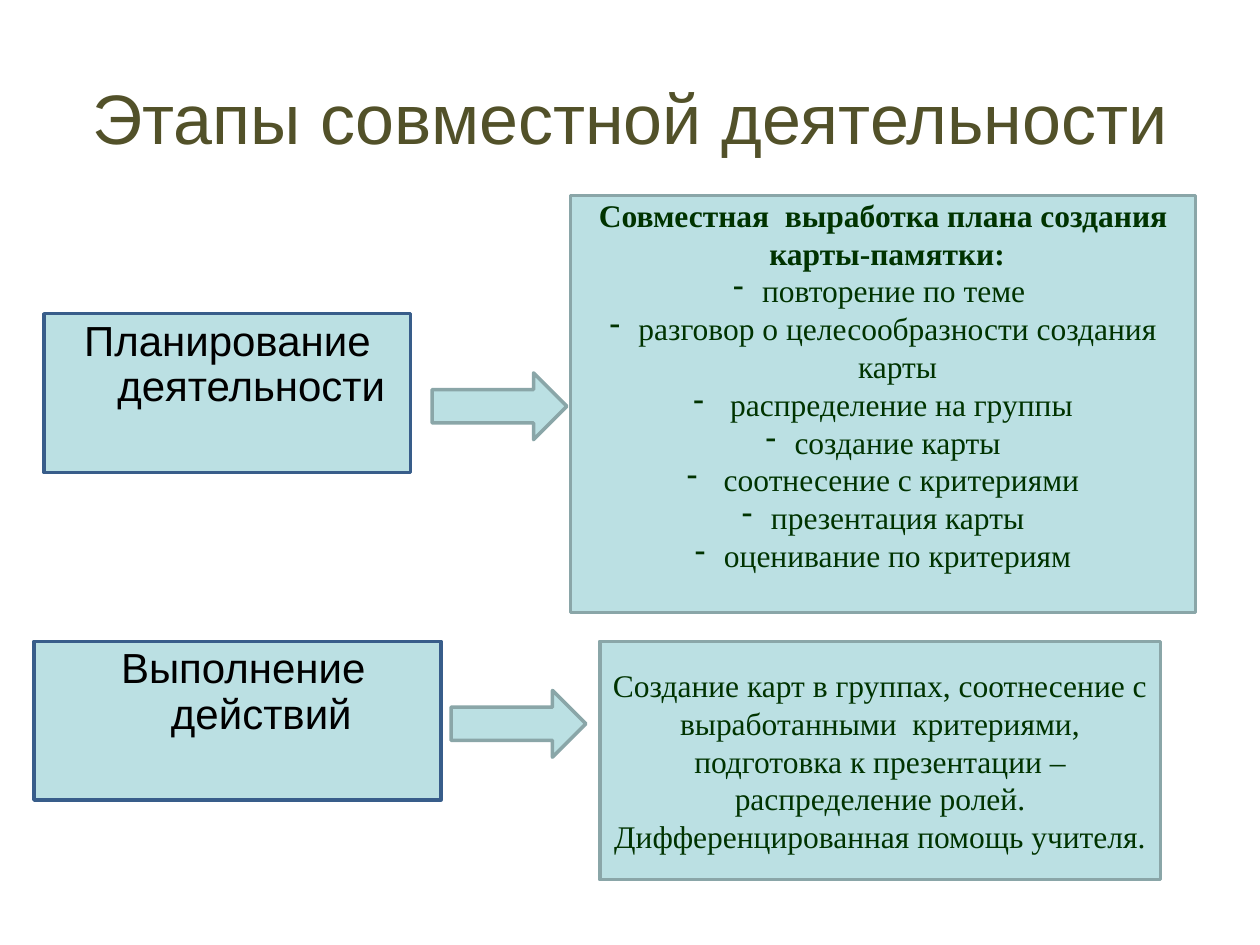
from pptx import Presentation
from pptx.util import Inches, Pt
from pptx.dml.color import RGBColor
from pptx.enum import shapes, text
from pptx.oxml.ns import qn
from lxml import etree

COLORS = {
    "title": "525129",
    "fill": "BBE0E3",
    "stage_line": "385D8A",
    "detail_line": "8AA6A8",
    "stage_text": "000000",
    "detail_text": "003300",
}


def color(name):
    return RGBColor.from_string(COLORS[name])


def add_block(kind, place, line):
    block = page.shapes.add_shape(kind, *[Inches(length) for length in place])
    block.shadow.inherit = False
    block.fill.solid()
    block.fill.fore_color.rgb = color("fill")
    block.line.color.rgb = color(line)
    block.line.width = Pt(2)
    return block


deck = Presentation()
deck.slide_width = Inches(10)
deck.slide_height = Inches(7.5)
page = deck.slides.add_slide(deck.slide_layouts[6])

title = page.shapes.add_textbox(Inches(0.5), Inches(0.3), Inches(9), Inches(1.25))
title.text_frame.word_wrap = True
title.text_frame.vertical_anchor = text.MSO_ANCHOR.MIDDLE
para = title.text_frame.paragraphs[0]
para.text = "Этапы совместной деятельности"
para.alignment = text.PP_ALIGN.CENTER
para.font.name = "Arial"
para.font.size = Pt(40)
para.font.color.rgb = color("title")

stages = [
    ((0.35, 2.49, 2.91, 1.26), "Планирование деятельности"),
    ((0.27, 5.09, 3.23, 1.26), " Выполнение действий"),
]
for place, wording in stages:
    box = add_block(shapes.MSO_SHAPE.RECTANGLE, place, "stage_line")
    box.text_frame.word_wrap = True
    box.text_frame.vertical_anchor = text.MSO_ANCHOR.TOP
    para = box.text_frame.paragraphs[0]
    para.text = wording
    para.alignment = text.PP_ALIGN.CENTER
    para.line_spacing = 0.9
    props = para._p.get_or_add_pPr()
    props.set("marL", str(Inches(0.38)))
    props.set("indent", str(Inches(-0.38)))
    para.font.name = "Arial"
    para.font.size = Pt(24)
    para.font.color.rgb = color("stage_text")

for left, top in [(3.58, 5.48), (3.43, 2.96)]:
    add_block(shapes.MSO_SHAPE.RIGHT_ARROW, (left, top, 1.07, 0.53), "detail_line")

details = [
    ((4.76, 5.09, 4.45, 1.89), 0.05, [
        ("plain", "Создание карт в группах, соотнесение с выработанными  критериями, "
                  "подготовка к презентации – распределение ролей."),
        ("plain", "Дифференцированная помощь учителя."),
    ]),
    ((4.53, 1.55, 4.96, 3.31), 0.35, [
        ("bold", "Совместная  выработка плана создания"),
        ("bold", " карты-памятки:"),
        ("bullet", "повторение по теме "),
        ("bullet", "разговор о целесообразности создания карты"),
        ("bullet", " распределение на группы"),
        ("bullet", "создание карты"),
        ("bullet", " соотнесение с критериями"),
        ("bullet", "презентация карты"),
        ("bullet", "оценивание по критериям"),
    ]),
]
for place, bottom, lines in details:
    box = add_block(shapes.MSO_SHAPE.RECTANGLE, place, "detail_line")
    frame = box.text_frame
    frame.word_wrap = True
    frame.vertical_anchor = text.MSO_ANCHOR.MIDDLE
    frame.margin_bottom = Inches(bottom)
    for index, (style, wording) in enumerate(lines):
        para = frame.add_paragraph() if index else frame.paragraphs[0]
        para.text = wording
        para.alignment = text.PP_ALIGN.CENTER
        if style == "bullet":
            props = para._p.get_or_add_pPr()
            props.set("marL", str(Inches(0.23)))
            props.set("indent", str(Inches(-0.23)))
            etree.SubElement(props, qn("a:buChar")).set("char", "-")
        para.font.name = "Times New Roman"
        para.font.size = Pt(18)
        para.font.bold = style == "bold"
        para.font.color.rgb = color("detail_text")

deck.save("out.pptx")
